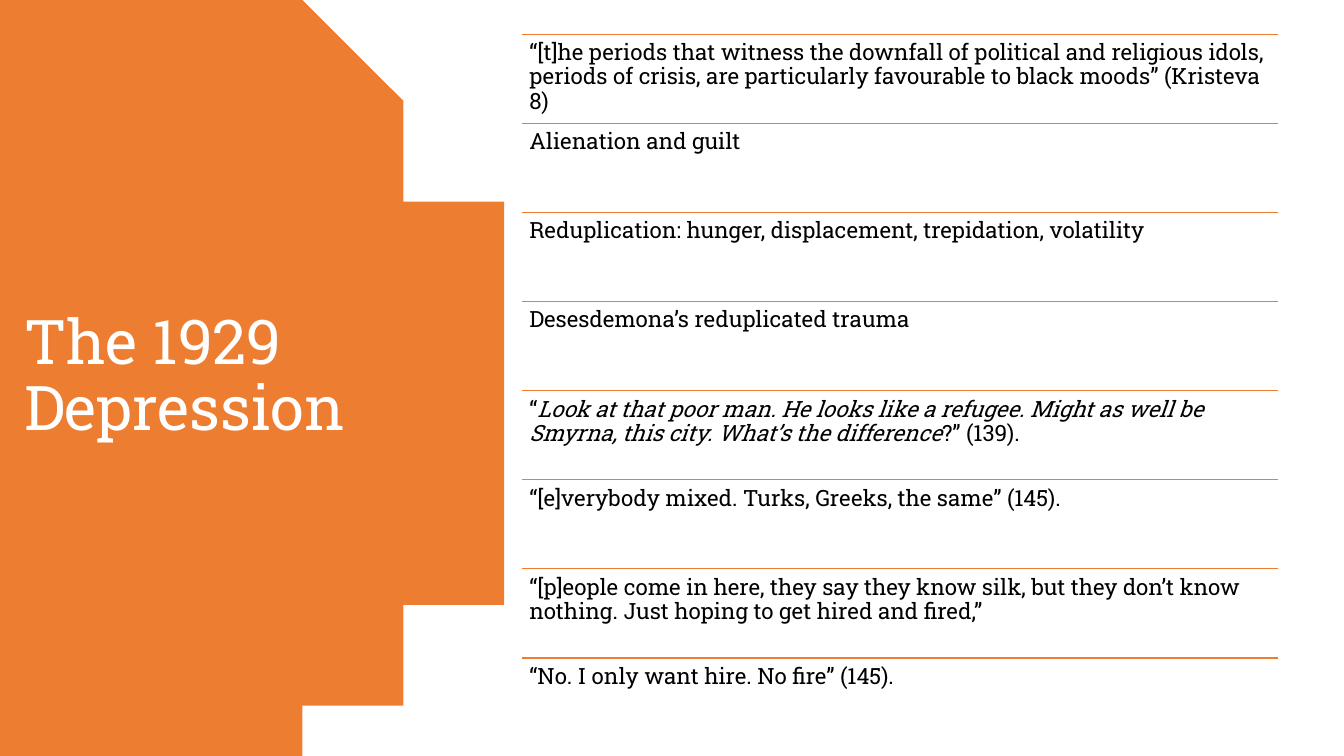
import math

from lxml import etree
from pptx import Presentation
from pptx import util as u
from pptx.dml.color import RGBColor
from pptx.enum import shapes, text
from pptx.oxml.ns import qn

ORANGE = RGBColor(0xED, 0x7D, 0x31)
WHITE = RGBColor(0xFF, 0xFF, 0xFF)
BLACK = RGBColor(0x00, 0x00, 0x00)

TITLE = "The 1929 Depression"
NOTES = [
    [("“[t]he periods that witness the downfall of political and religious idols, "
      "periods of crisis, are particularly favourable to black moods” (Kristeva 8)", False)],
    [("Alienation and guilt", False)],
    [("Reduplication: hunger, displacement, trepidation, volatility", False)],
    [("Desesdemona’s reduplicated trauma", False)],
    [("“", False),
     ("Look at that poor man. He looks like a refugee. Might as well be Smyrna, "
      "this city. What’s the difference", True),
     ("?” (139).", False)],
    [("“[e]verybody mixed. Turks, Greeks, the same” (145).", False)],
    [("“[p]eople come in here, they say they know silk, but they don’t know nothing. "
      "Just hoping to get hired and fired,”", False)],
    [("“No. I only want hire. No fire” (145).", False)],
]
LIST_LEFT, LIST_TOP, LIST_WIDTH = 5.18, 0.34, 7.5
LIST_HEIGHT = 7.07
PAGE_WIDTH, PAGE_HEIGHT = 13.33, 7.5


class SlideBuilder:
    """Draw styled elements on the current slide."""

    font = "Roboto Slab"
    accent = ORANGE

    def __init__(self, page):
        self.page = page

    def round_panel(self, center, radius, height, steps=120):
        """Fill the left side up to a circular right edge."""
        middle = height / 2
        reach = math.asin(middle / radius)
        angles = [reach * (2 * step / steps - 1) for step in range(steps + 1)]
        arc = [(center + radius * math.cos(angle), middle + radius * math.sin(angle))
               for angle in angles]
        builder = self.page.shapes.build_freeform(0, 0, scale=u.Inches(1))
        builder.add_line_segments(arc + [(0, height)], close=True)
        panel = builder.convert_to_shape()
        panel.shadow.inherit = False
        panel.fill.solid()
        panel.fill.fore_color.rgb = self.accent
        panel.line.fill.background()

    def rule(self, left, top, width):
        """Draw a thin horizontal line."""
        line = self.page.shapes.add_connector(
            shapes.MSO_CONNECTOR.STRAIGHT, u.Inches(left), u.Inches(top),
            u.Inches(left + width), u.Inches(top))
        line.line.color.rgb = self.accent
        line.line.width = u.Pt(1)
        etree.SubElement(line._element.spPr, qn("a:effectLst"))

    def text(self, area, spans, size, color, insets=(0.1, 0.05), after=6,
             anchor=text.MSO_ANCHOR.TOP):
        """Write one paragraph of plain and italic spans."""
        box = self.page.shapes.add_textbox(*(u.Inches(length) for length in area))
        frame = box.text_frame
        frame.word_wrap = True
        frame.vertical_anchor = anchor
        frame.margin_left = frame.margin_right = u.Inches(insets[0])
        frame.margin_top = frame.margin_bottom = u.Inches(insets[1])
        para = frame.paragraphs[0]
        para.line_spacing = 0.9
        para.space_after = u.Pt(after)
        for words, italic in spans:
            span = para.add_run()
            span.text = words
            span.font.name = self.font
            span.font.size = u.Pt(size)
            span.font.italic = italic
            span.font.color.rgb = color


def main():
    """Build and save the slide."""
    deck = Presentation()
    deck.slide_width = u.Inches(PAGE_WIDTH)
    deck.slide_height = u.Inches(PAGE_HEIGHT)
    builder = SlideBuilder(deck.slides.add_slide(deck.slide_layouts[6]))

    builder.round_panel(center=0.53, radius=4.4, height=PAGE_HEIGHT)
    builder.text((0.14, 0.7, 4.01, 6.09), [(TITLE, False)], 44, WHITE,
                 anchor=text.MSO_ANCHOR.MIDDLE)

    row_height = LIST_HEIGHT / len(NOTES)
    for row, spans in enumerate(NOTES):
        top = LIST_TOP + row * row_height
        builder.rule(LIST_LEFT, top, LIST_WIDTH)
        builder.text((LIST_LEFT, top, LIST_WIDTH, row_height), spans, 16, BLACK,
                     insets=(0.07, 0.07), after=5.6)

    deck.save("out.pptx")


if __name__ == "__main__":
    main()
